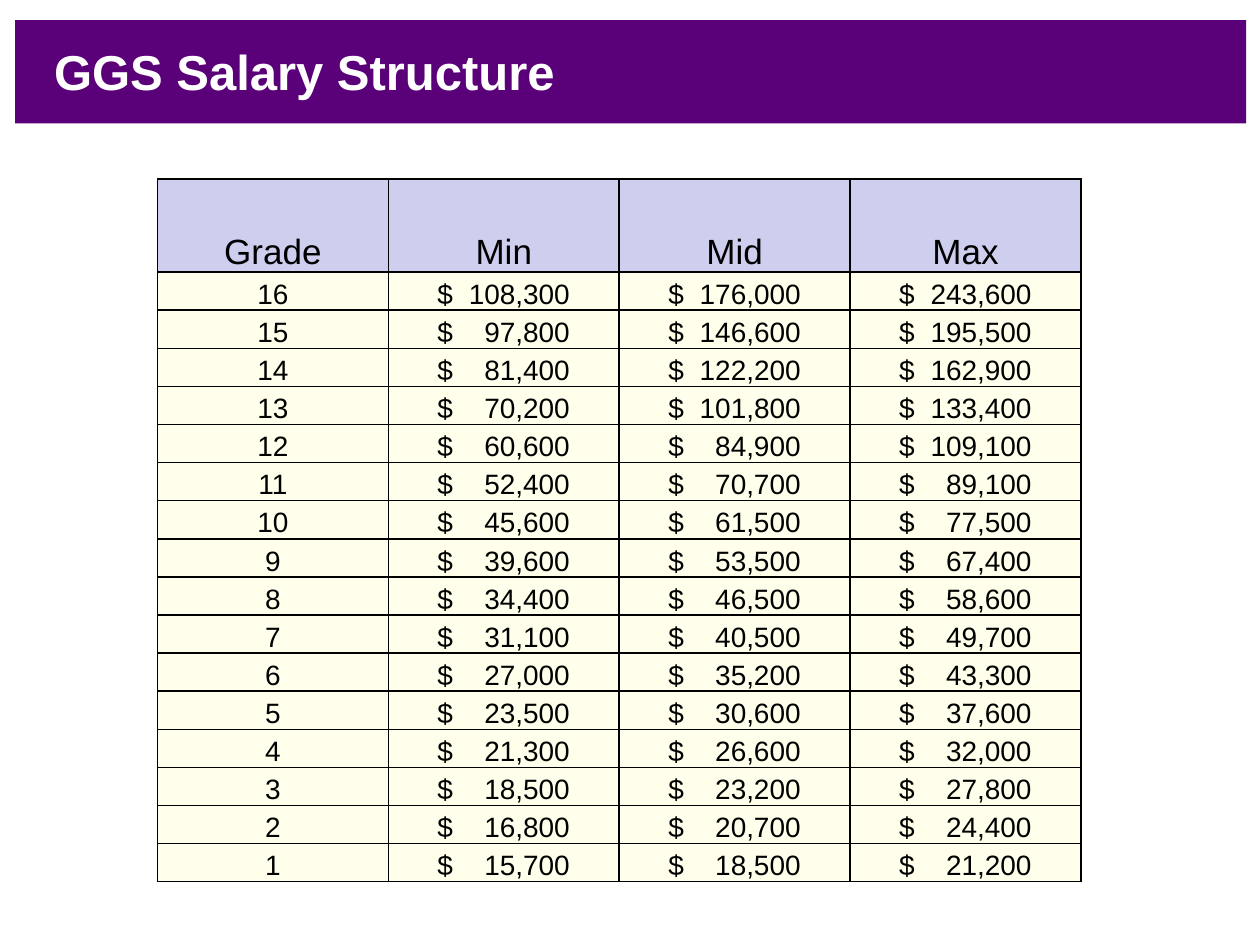
from lxml import etree
from pptx import Presentation
from pptx.dml.color import RGBColor
from pptx.enum.shapes import MSO_SHAPE
from pptx.enum.text import MSO_ANCHOR, MSO_AUTO_SIZE, PP_ALIGN
from pptx.oxml.ns import qn
from pptx.util import Inches, Pt

RECTANGLE = MSO_SHAPE.RECTANGLE
MIDDLE, BOTTOM = MSO_ANCHOR.MIDDLE, MSO_ANCHOR.BOTTOM
LEFT, CENTER = PP_ALIGN.LEFT, PP_ALIGN.CENTER
NO_FIT = MSO_AUTO_SIZE.NONE

PURPLE = RGBColor(0x5A, 0x00, 0x78)
LAVENDER = RGBColor(0xCE, 0xCE, 0xEF)
IVORY = RGBColor(0xFF, 0xFF, 0xEB)
WHITE = RGBColor(0xFF, 0xFF, 0xFF)
BLACK = RGBColor(0x00, 0x00, 0x00)

TITLE_FORMAT = {"name": "Arial", "size": Pt(28), "bold": True}
HEADER_FORMAT = {"name": "Arial", "size": Pt(20), "bold": False}
BODY_FORMAT = {"name": "Arial", "size": Pt(16), "bold": False}
CELL_FORMAT = {"vertical_anchor": BOTTOM, "margin_left": 0, "margin_right": 0,
               "margin_top": 0, "margin_bottom": 0}

HEADINGS = ("Grade", "Min", "Mid", "Max")
SALARIES = (
    (16, 108300, 176000, 243600),
    (15, 97800, 146600, 195500),
    (14, 81400, 122200, 162900),
    (13, 70200, 101800, 133400),
    (12, 60600, 84900, 109100),
    (11, 52400, 70700, 89100),
    (10, 45600, 61500, 77500),
    (9, 39600, 53500, 67400),
    (8, 34400, 46500, 58600),
    (7, 31100, 40500, 49700),
    (6, 27000, 35200, 43300),
    (5, 23500, 30600, 37600),
    (4, 21300, 26600, 32000),
    (3, 18500, 23200, 27800),
    (2, 16800, 20700, 24400),
    (1, 15700, 18500, 21200),
)
HEADER_HEIGHT = Inches(0.74)
DOLLAR_INDENT = Inches(0.39)
AMOUNT_WIDTH = Inches(1.05)


def apply_format(target, values):
    """Set each named attribute on the target."""
    for name, value in values.items():
        setattr(target, name, value)


def format_font(para, values, color):
    """Give a paragraph its font values and colour."""
    apply_format(para.font, values)
    para.font.color.rgb = color


def add_title_band(page, left, top, width, height):
    """Draw the purple band with the slide title on it."""
    band = page.shapes.add_shape(RECTANGLE, left, top, width, height)
    band.shadow.inherit = False
    band.fill.solid()
    band.fill.fore_color.rgb = PURPLE
    band.line.fill.background()

    title = page.shapes.title
    band.element.addnext(title.element)
    apply_format(title, {"left": left + Inches(0.21), "top": top + Inches(0.09),
                         "width": Inches(9.33), "height": Inches(0.62)})
    frame = title.text_frame
    frame.text = "GGS Salary Structure"
    apply_format(frame, {"vertical_anchor": MIDDLE, "auto_size": NO_FIT, "word_wrap": True})
    para = frame.paragraphs[0]
    para.alignment = LEFT
    format_font(para, TITLE_FORMAT, WHITE)


def add_borders(cell):
    """Outline a cell with thin black lines."""
    properties = cell._tc.get_or_add_tcPr()
    for position, side in enumerate(("lnL", "lnR", "lnT", "lnB")):
        line = etree.Element(qn(f"a:{side}"), w=str(Pt(1)))
        fill = etree.SubElement(line, qn("a:solidFill"))
        etree.SubElement(fill, qn("a:srgbClr"), val=str(BLACK))
        properties.insert(position, line)


def add_amount_tab(para):
    """Add the right tab stop that lines up the amounts."""
    stops = etree.SubElement(para._p.get_or_add_pPr(), qn("a:tabLst"))
    etree.SubElement(stops, qn("a:tab"), pos=str(AMOUNT_WIDTH), algn="r")


def fill_cell(cell, text, font_format, color, is_amount=False):
    """Write one cell with its text, fill and borders."""
    cell.text = text
    apply_format(cell, CELL_FORMAT)
    cell.fill.solid()
    cell.fill.fore_color.rgb = color
    add_borders(cell)
    para = cell.text_frame.paragraphs[0]
    para.alignment = CENTER
    if is_amount:
        cell.margin_left = DOLLAR_INDENT
        para.alignment = LEFT
        add_amount_tab(para)
    format_font(para, font_format, BLACK)


def add_salary_table(page, left, top, width, height):
    """Build the table of salary ranges by grade."""
    table = page.shapes.add_table(len(SALARIES) + 1, len(HEADINGS),
                                  left, top, width, height).table
    apply_format(table, {"first_row": False, "horz_banding": False})
    for column in table.columns:
        column.width = width // len(HEADINGS)
    for row in table.rows:
        row.height = (height - HEADER_HEIGHT) // len(SALARIES)
    table.rows[0].height = HEADER_HEIGHT

    for column, heading in enumerate(HEADINGS):
        fill_cell(table.cell(0, column), heading, HEADER_FORMAT, LAVENDER)
    for row, (grade, *amounts) in enumerate(SALARIES, start=1):
        fill_cell(table.cell(row, 0), str(grade), BODY_FORMAT, IVORY)
        for column, amount in enumerate(amounts, start=1):
            fill_cell(table.cell(row, column), f"$\t{amount:,}", BODY_FORMAT, IVORY, True)


def main():
    """Create the deck and save it."""
    deck = Presentation()
    deck.slide_width, deck.slide_height = Inches(10), Inches(7.5)
    page = deck.slides.add_slide(deck.slide_layouts[5])
    add_title_band(page, Inches(0.12), Inches(0.16), Inches(9.77), Inches(0.82))
    add_salary_table(page, Inches(1.25), Inches(1.42), Inches(7.33), Inches(5.58))
    deck.save("out.pptx")


if __name__ == "__main__":
    main()
